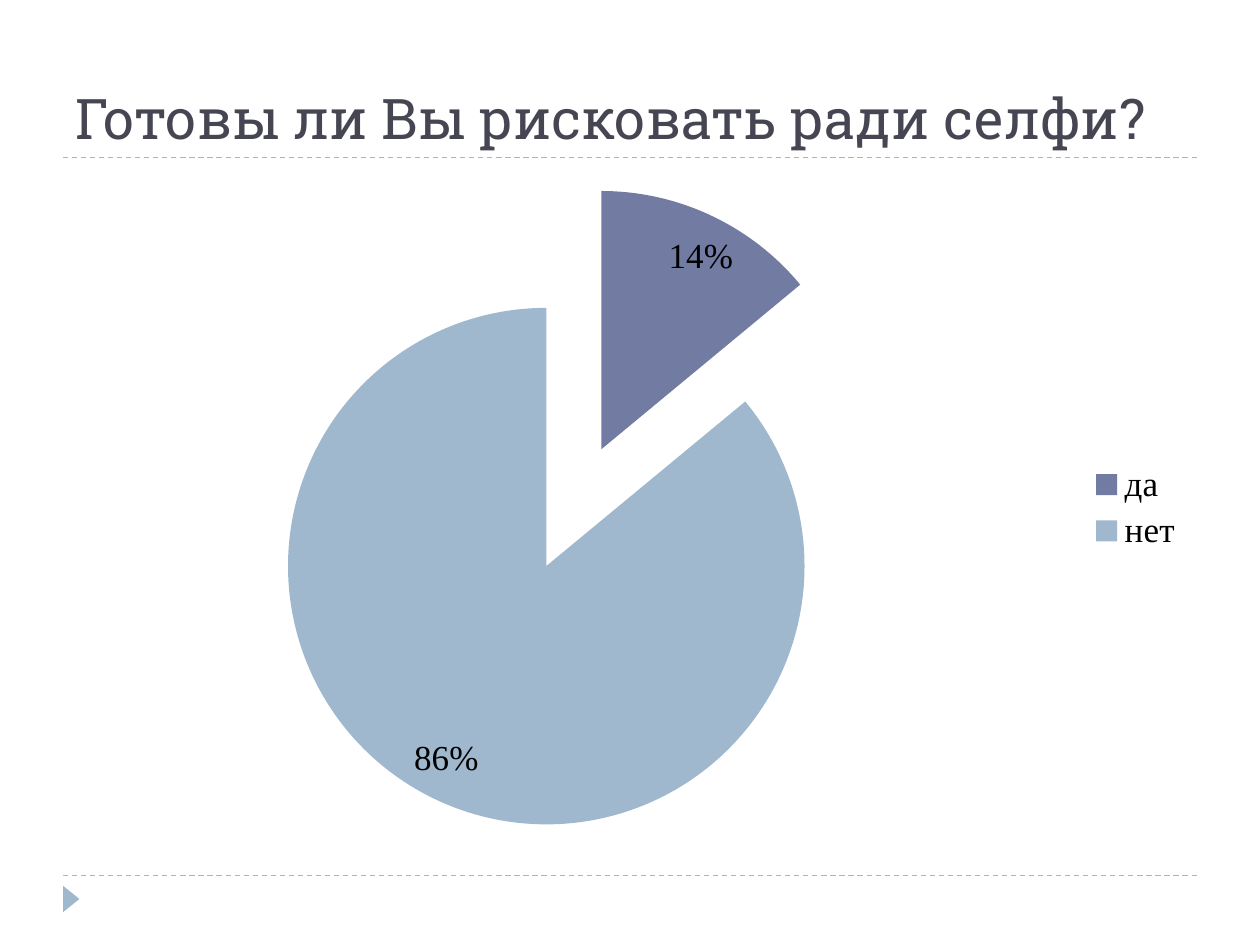
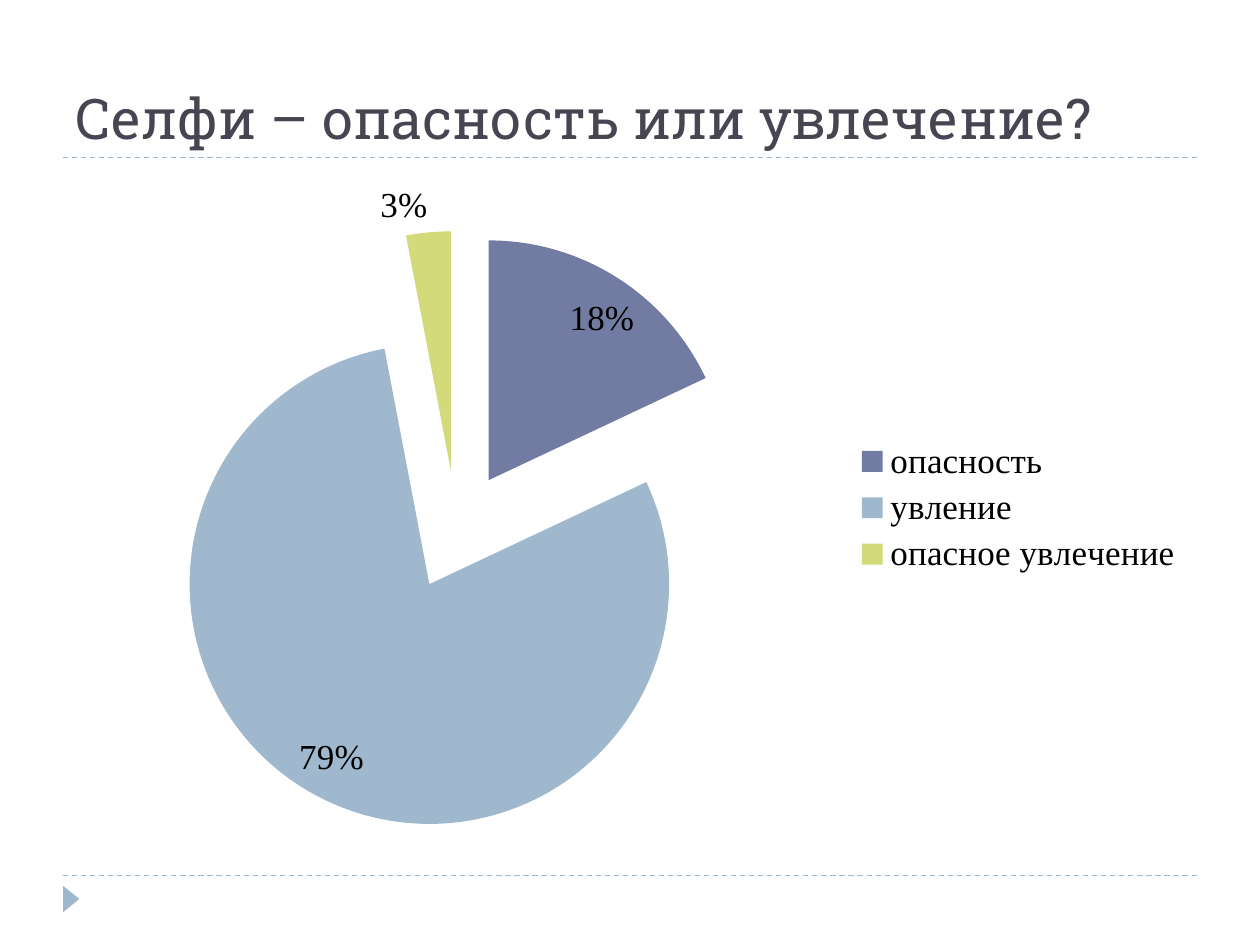
from dataclasses import dataclass

from lxml import etree
from pptx import Presentation
from pptx import util as u
from pptx.chart.data import CategoryChartData
from pptx.dml.color import RGBColor
from pptx.enum import chart as charts, dml, shapes, text
from pptx.oxml.ns import qn

TITLE_COLOR = RGBColor(0x46, 0x46, 0x53)
TEXT_COLOR = RGBColor(0x00, 0x00, 0x00)
INDIGO = RGBColor(0x72, 0x7C, 0xA3)
SKY = RGBColor(0x9F, 0xB8, 0xCD)
LIME = RGBColor(0xD2, 0xDA, 0x7A)
SLICE_COLORS = (INDIGO, SKY, LIME)

TITLE_FONT = "Roboto Slab"
CHART_FONT = "Calibri"
LABEL_FONT = "Times New Roman"

LEFT, WIDTH = u.Inches(0.5), u.Inches(9)
RULE_TOPS = (u.Inches(1.25), u.Inches(6.95))
EXPLOSION = 25
TITLE_ONLY_LAYOUT = 5


@dataclass
class Poll:
    question: str
    answers: dict[str, int]


POLLS = (
    Poll("Готовы ли Вы рисковать ради селфи?", {"да": 14, "нет": 86}),
    Poll("Селфи – опасность или увлечение?",
         {"опасность": 18, "увление": 79, "опасное увлечение": 3}),
)


def style_font(font, name: str, size: int, color: RGBColor) -> None:
    font.name = name
    font.size = u.Pt(size)
    font.color.rgb = color


def add_frame(slide) -> None:
    # Dashed rules
    for top in RULE_TOPS:
        rule = slide.shapes.add_connector(
            shapes.MSO_CONNECTOR.STRAIGHT, LEFT, top, LEFT + WIDTH, top)
        rule.line.color.rgb = SKY
        rule.line.width = u.Pt(0.75)
        rule.line.dash_style = dml.MSO_LINE.DASH
        etree.SubElement(rule._element.spPr, qn("a:effectLst"))

    # Footer marker
    marker = slide.shapes.add_shape(
        shapes.MSO_SHAPE.ISOSCELES_TRIANGLE,
        u.Inches(0.46), u.Inches(7.07), u.Inches(0.21), u.Inches(0.13))
    marker.rotation = 90
    marker.shadow.inherit = False
    marker.fill.solid()
    marker.fill.fore_color.rgb = SKY
    marker.line.fill.background()


def set_title(slide, question: str) -> None:
    title = slide.shapes.title
    title.left, title.top = LEFT, u.Inches(0.17)
    title.width, title.height = WIDTH, u.Inches(1.08)
    frame = title.text_frame
    frame.word_wrap = True
    frame.auto_size = text.MSO_AUTO_SIZE.NONE
    frame.vertical_anchor = text.MSO_ANCHOR.BOTTOM
    paragraph = frame.paragraphs[0]
    paragraph.alignment = text.PP_ALIGN.LEFT
    run = paragraph.add_run()
    run.text = question
    style_font(run.font, TITLE_FONT, 32, TITLE_COLOR)


def add_pie(slide, answers: dict[str, int]) -> None:
    data = CategoryChartData()
    data.categories = list(answers)
    data.add_series("Series 1", list(answers.values()))
    chart = slide.shapes.add_chart(
        charts.XL_CHART_TYPE.PIE, LEFT, u.Inches(1.33),
        WIDTH, u.Inches(5.4), data).chart
    chart.has_title = False
    style_font(chart.font, CHART_FONT, 18, TEXT_COLOR)

    # Legend
    chart.has_legend = True
    chart.legend.position = charts.XL_LEGEND_POSITION.RIGHT
    chart.legend.include_in_layout = False
    style_font(chart.legend.font, LABEL_FONT, 20, TEXT_COLOR)

    # Slices, pulled apart
    chart.plots[0].vary_by_categories = True
    series = chart.plots[0].series[0]
    for index, color in enumerate(SLICE_COLORS[:len(answers)]):
        fill = series.points[index].format.fill
        fill.solid()
        fill.fore_color.rgb = color
    explosion = etree.Element(qn("c:explosion"), val=str(EXPLOSION))
    series._element.find(qn("c:dPt")).addprevious(explosion)

    # Percent labels
    labels = series.data_labels
    labels.show_value = False
    labels.show_percentage = True
    labels.number_format = "0%"
    labels.number_format_is_linked = False
    labels.position = charts.XL_LABEL_POSITION.BEST_FIT
    style_font(labels.font, LABEL_FONT, 20, TEXT_COLOR)


def main() -> None:
    presentation = Presentation()
    presentation.slide_width = u.Inches(10)
    presentation.slide_height = u.Inches(7.5)
    for poll in POLLS:
        slide = presentation.slides.add_slide(
            presentation.slide_layouts[TITLE_ONLY_LAYOUT])
        add_frame(slide)
        set_title(slide, poll.question)
        add_pie(slide, poll.answers)
    presentation.save("out.pptx")


if __name__ == "__main__":
    main()
